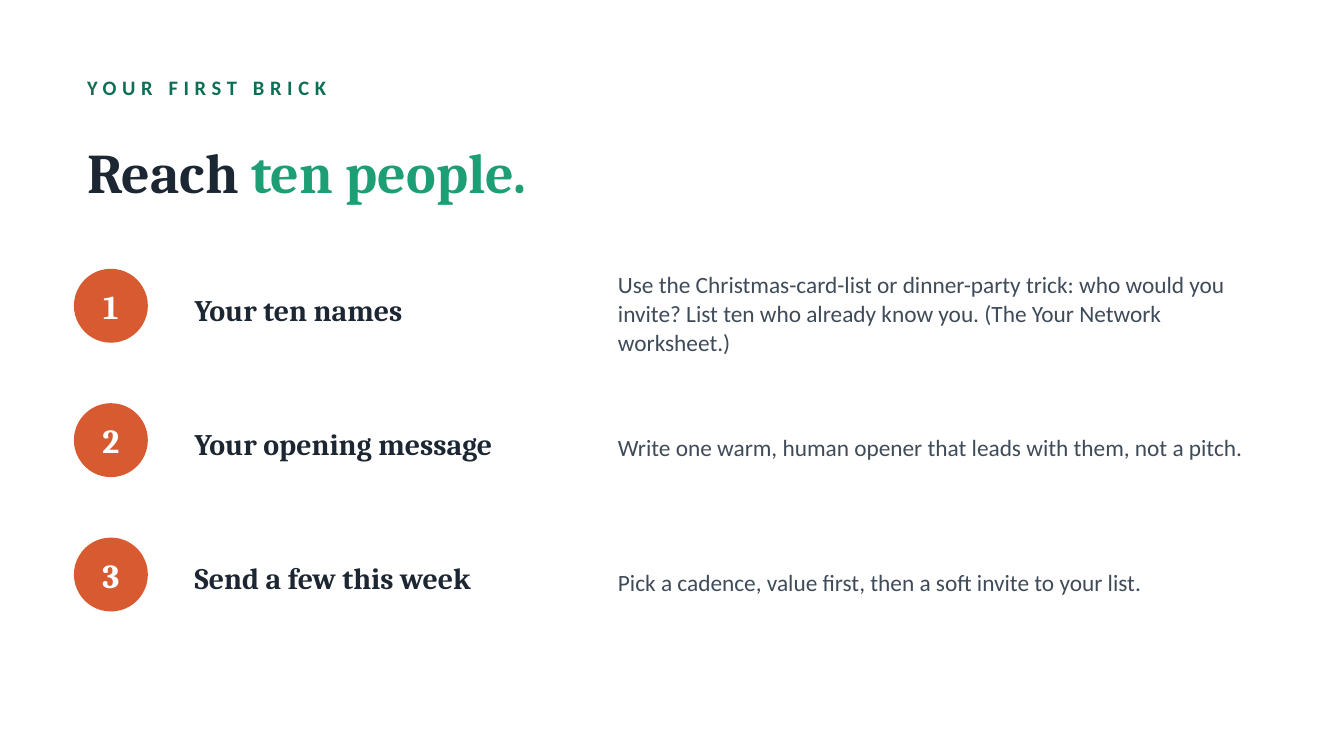
from dataclasses import dataclass

from pptx import Presentation
from pptx.dml.color import RGBColor
from pptx.enum.shapes import MSO_SHAPE as SHAPE
from pptx.enum.text import MSO_ANCHOR as ANCHOR, PP_ALIGN as ALIGN
from pptx.util import Inches, Pt


@dataclass(frozen=True)
class Theme:
    paper: str = "FFFFFF"
    badge: str = "D85A30"
    accent: str = "1D9E75"
    kicker = {"name": "Calibri", "size": 11, "bold": True, "color": "0F6E56"}
    title = {"name": "Cambria", "size": 30, "bold": True, "color": "1C2733"}
    number = {"name": "Cambria", "size": 18, "bold": True, "color": "FFFFFF"}
    label = {"name": "Cambria", "size": 16, "bold": True, "color": "1C2733"}
    body = {"name": "Calibri", "size": 12.5, "bold": False, "color": "3F4B59"}


THEME = Theme()

STEPS = [
    ("Your ten names",
     "Use the Christmas-card-list or dinner-party trick: who would you invite? "
     "List ten who already know you. (The Your Network worksheet.)"),
    ("Your opening message",
     "Write one warm, human opener that leads with them, not a pitch."),
    ("Send a few this week",
     "Pick a cadence, value first, then a soft invite to your list."),
]


def add_text(s, box, runs, **paragraph_format):
    """Add a one-paragraph text box; runs are (text, font format) pairs."""
    tf = s.shapes.add_textbox(*map(Inches, box)).text_frame
    tf.word_wrap = True
    tf.vertical_anchor = ANCHOR.MIDDLE
    p = tf.paragraphs[0]
    for key, value in paragraph_format.items():
        setattr(p, key, value)
    for text, style in runs:
        r = p.add_run()
        r.text = text
        for key, value in style.items():
            if key == "color":
                r.font.color.rgb = RGBColor.from_string(value)
            else:
                setattr(r.font, key, Pt(value) if key == "size" else value)
    return p


def add_header(s, left, top, width):
    # Letter-spaced kicker
    p = add_text(s, (left, top, width, 0.3), [("YOUR FIRST BRICK", THEME.kicker)])
    p.runs[0].font._element.set("spc", "300")
    # Two-colour title
    add_text(s, (left, top + 0.35, width, 0.85), [
        ("Reach ", THEME.title),
        ("ten people.", {**THEME.title, "color": THEME.accent}),
    ])


def add_step(s, left, top, width, number, label, detail):
    # Numbered badge
    badge_box = (left, top, 0.55, 0.55)
    badge = s.shapes.add_shape(SHAPE.OVAL, *map(Inches, badge_box))
    badge.shadow.inherit = False
    badge.fill.solid()
    badge.fill.fore_color.rgb = RGBColor.from_string(THEME.badge)
    badge.line.fill.background()
    add_text(s, badge_box, [(str(number), THEME.number)], alignment=ALIGN.CENTER)
    # Label and detail columns
    detail_x = 3.95
    add_text(s, (left + 0.8, top - 0.05, 3, 0.7), [(label, THEME.label)])
    add_text(s, (left + detail_x, top - 0.05, width - detail_x, 0.75),
             [(detail, THEME.body)], line_spacing=1.05)


def add_steps(s, left, top, width, pitch):
    for i, (label, detail) in enumerate(STEPS):
        add_step(s, left, top + i * pitch, width, i + 1, label, detail)


def main():
    prs = Presentation()
    # Widescreen 16:9
    prs.slide_width, prs.slide_height = Inches(10), Inches(10 * 9 / 16)
    s = prs.slides.add_slide(prs.slide_layouts[6])
    s.background.fill.solid()
    s.background.fill.fore_color.rgb = RGBColor.from_string(THEME.paper)
    add_header(s, left=0.55, top=0.5, width=8.9)
    add_steps(s, left=0.55, top=2, width=8.95, pitch=1)
    prs.save("out.pptx")


if __name__ == "__main__":
    main()
